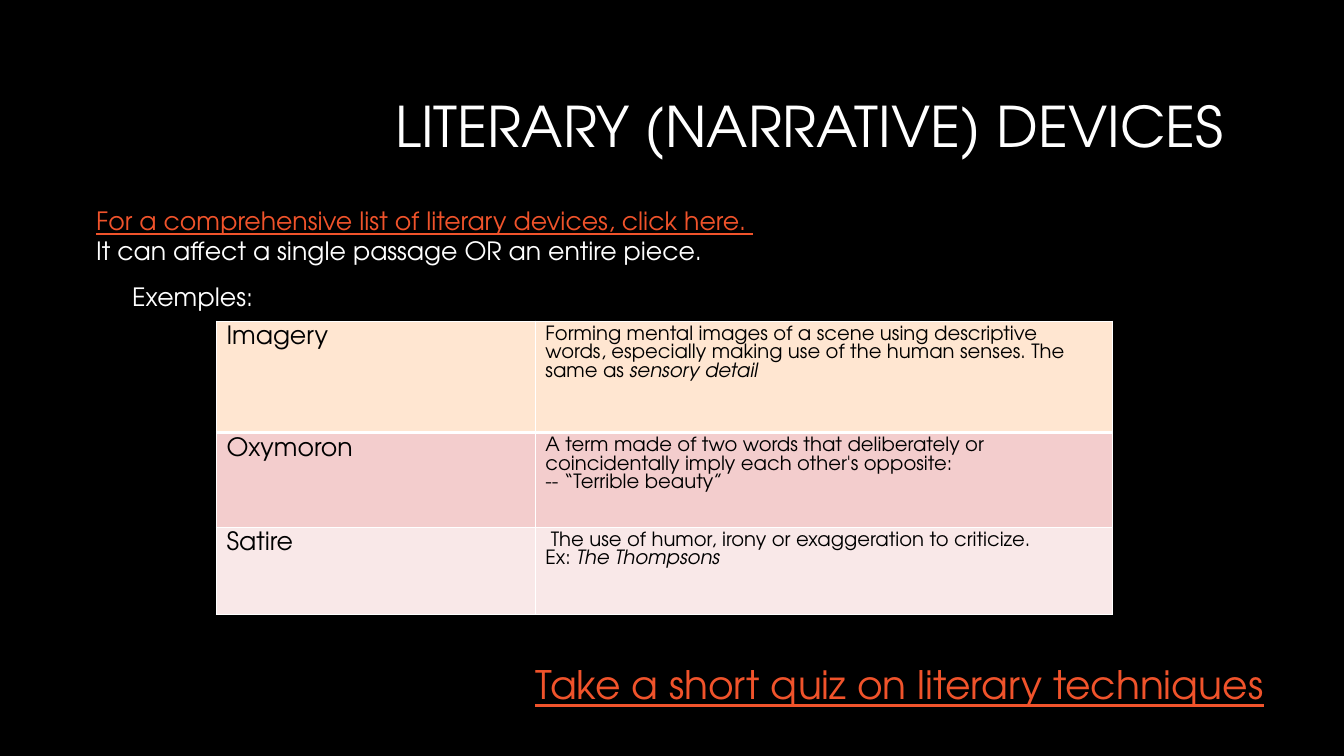
import pptx
import pptx.util
import pptx.dml.color
import pptx.enum.text
import pptx.oxml
import pptx.oxml.ns

Pt = pptx.util.Pt
FONT = "TeX Gyre Adventor"
WHITE, BLACK, ORANGE = "FFFFFF", "000000", "F0532B"

DEVICES = [
    ("Imagery", [[("Forming mental images of a scene using descriptive words, especially "
                   "making use of the human senses. The same as ", False),
                  ("sensory detail", True)]], "FFE6D1", 79.4),
    ("Oxymoron", [[("A term made of two words that deliberately or coincidentally imply "
                    "each other's opposite:\v-- “Terrible beauty”", False)]], "F3CDCD", 67.7),
    ("Satire", [[(" The use of humor, irony or exaggeration to criticize.", False)],
                [("Ex: ", False), ("The Thompsons", True)]], "F9E8E8", 62.6),
]


def color(value):
    return pptx.dml.color.RGBColor.from_string(value)


def format_run(r, size, fill, underline=False, italic=False):
    r.font.name = FONT
    r.font.size = Pt(size)
    r.font.color.rgb = color(fill)
    r.font.underline = underline
    r.font.italic = italic


def add_title(s, text, left, top, width, height):
    sp = s.shapes.title
    sp.left, sp.top, sp.width, sp.height = Pt(left), Pt(top), Pt(width), Pt(height)
    tf = sp.text_frame
    tf.text = text
    tf.word_wrap = True
    tf.auto_size = pptx.enum.text.MSO_AUTO_SIZE.NONE
    tf.vertical_anchor = pptx.enum.text.MSO_ANCHOR.TOP
    p = tf.paragraphs[0]
    p.alignment = pptx.enum.text.PP_ALIGN.RIGHT
    p.line_spacing = 0.9
    format_run(p.runs[0], 40, WHITE)


def add_text(s, lines, size, left, top, width, height):
    tf = s.shapes.add_textbox(Pt(left), Pt(top), Pt(width), Pt(height)).text_frame
    tf.word_wrap = True
    tf.auto_size = pptx.enum.text.MSO_AUTO_SIZE.SHAPE_TO_FIT_TEXT
    tf.text = "\n".join(text for text, _ in lines)
    for p, (_, fill) in zip(tf.paragraphs, lines):
        format_run(p.runs[0], size, fill, underline=fill == ORANGE)


def set_borders(cell, widths):
    tc_pr = cell._tc.get_or_add_tcPr()
    for i, (side, width) in enumerate(widths.items()):
        ln = pptx.oxml.parse_xml(
            f'<a:{side} {pptx.oxml.ns.nsdecls("a")} w="{Pt(width)}"><a:solidFill>'
            f'<a:srgbClr val="{WHITE}"/></a:solidFill></a:{side}>')
        tc_pr.insert(i, ln)


def fill_cell(cell, paragraphs, size, fill, top, bottom):
    cell.fill.solid()
    cell.fill.fore_color.rgb = color(fill)
    set_borders(cell, {"lnL": 1, "lnR": 1, "lnT": top, "lnB": bottom})
    tf = cell.text_frame
    tf.text = "\n".join("" for _ in paragraphs)
    for p, runs in zip(tf.paragraphs, paragraphs):
        p.text = runs[0][0]
        for text, _ in runs[1:]:
            p.add_run().text = text
        for r in p.runs:
            format_run(r, size, BLACK, italic=r.text in [t for t, it in runs if it])


def add_devices_table(s, left, top, widths):
    height = sum(row[-1] for row in DEVICES)
    table = s.shapes.add_table(len(DEVICES), len(widths), Pt(left), Pt(top),
                               Pt(sum(widths)), Pt(height)).table
    table.first_row = False
    table.horz_banding = False
    for column, width in zip(table.columns, widths):
        column.width = Pt(width)
    for i, (name, meaning, fill, row_height) in enumerate(DEVICES):
        table.rows[i].height = Pt(row_height)
        top_line, bottom_line = (3 if i == 1 else 1), (3 if i == 0 else 1)
        fill_cell(table.cell(i, 0), [[(name, False)]], 18, fill, top_line, bottom_line)
        fill_cell(table.cell(i, 1), meaning, 14, fill, top_line, bottom_line)


def main():
    prs = pptx.Presentation()
    prs.slide_width, prs.slide_height = Pt(960), Pt(540)
    s = prs.slides.add_slide(prs.slide_layouts[5])
    s.background.fill.solid()
    s.background.fill.fore_color.rgb = color(BLACK)
    add_title(s, "LITERARY (NARRATIVE) DEVICES", 203, 67, 678.2, 57.6)
    add_text(s, [("For a comprehensive list of literary devices, click here. ", ORANGE),
                 ("It can affect a single passage OR an entire piece.", WHITE)],
             18, 61.6, 142.9, 510.5, 51)
    add_text(s, [("Exemples:", WHITE)], 18, 87.4, 197.3, 774.7, 29)
    add_devices_table(s, 154.6, 229.5, [227.8, 412.2])
    add_text(s, [("Take a short quiz on literary techniques", ORANGE)],
             28, 375.4, 468, 556.6, 41)
    prs.save("out.pptx")


if __name__ == "__main__":
    main()
